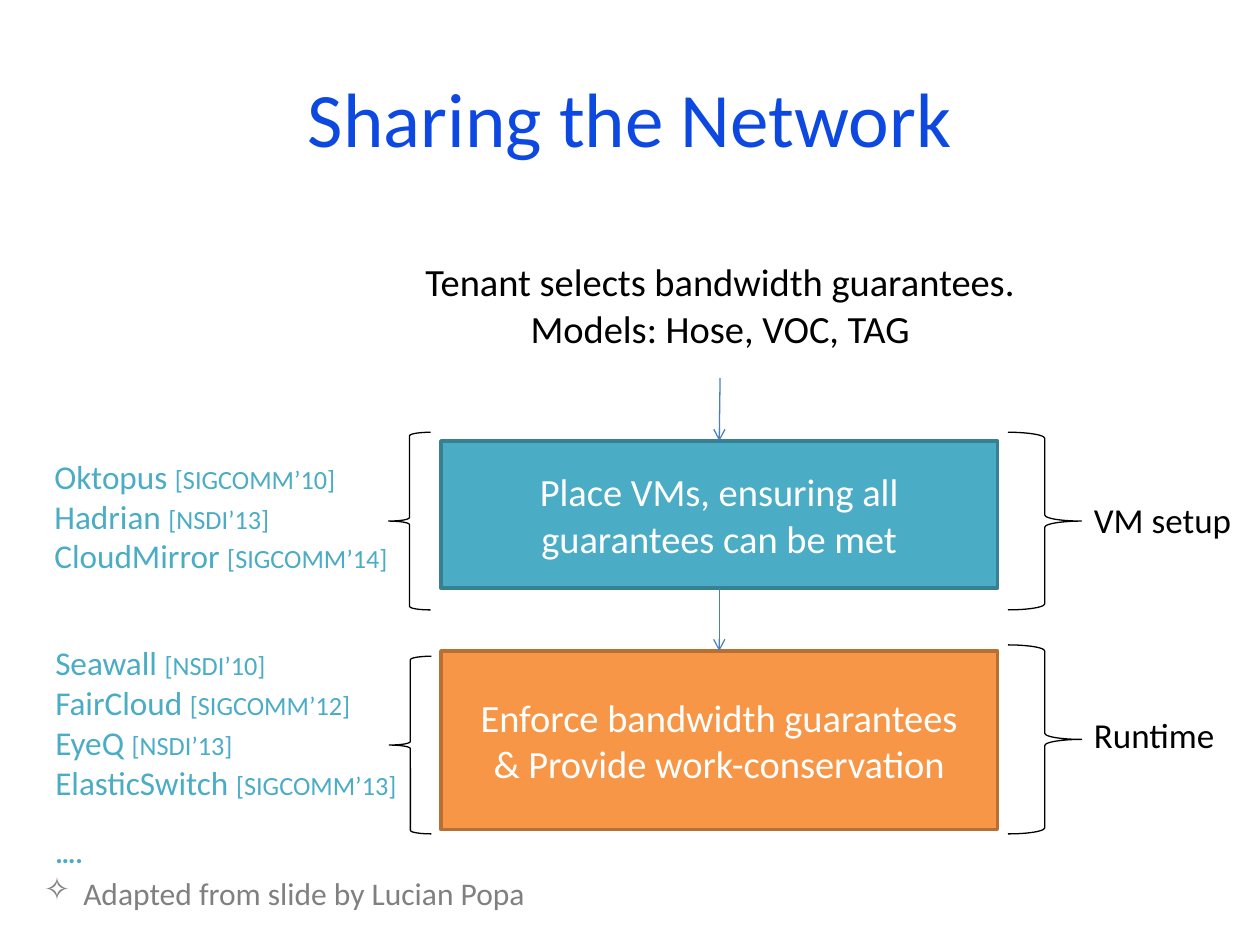
from typing import NamedTuple, Optional

from lxml.etree import SubElement
from pptx import Presentation
from pptx.dml.color import RGBColor
from pptx.enum.shapes import MSO_CONNECTOR as Connector, MSO_SHAPE as Shape
from pptx.enum.text import MSO_ANCHOR as Anchor, PP_ALIGN as Align
from pptx.oxml.ns import qn
from pptx.util import Pt

FONT = "Calibri"
TITLE_BLUE = RGBColor(0x0D, 0x49, 0xE1)
ARROW_BLUE = RGBColor(0x4B, 0x7E, 0xBC)
TEAL = RGBColor(0x4B, 0xAC, 0xC6)
DARK_TEAL = RGBColor(0x37, 0x7F, 0x92)
ORANGE = RGBColor(0xF7, 0x96, 0x46)
DARK_ORANGE = RGBColor(0xB7, 0x6F, 0x34)
GRAY = RGBColor(0x80, 0x80, 0x80)
BLACK = RGBColor(0, 0, 0)
WHITE = RGBColor(0xFF, 0xFF, 0xFF)

BOTTOM, TOP = 2, 0  # connection sites


class Area(NamedTuple):
    left: float
    top: float
    width: float
    height: float

    def points(self):
        return [Pt(value) for value in self]


class Span(NamedTuple):
    text: str
    size: float
    bold: Optional[bool] = None
    baseline: Optional[int] = None  # thousandths of a percent


class Stage(NamedTuple):
    area: Area
    fill: RGBColor
    edge: RGBColor
    lines: list
    left_brace: Area
    right_brace: Area
    label: str
    label_area: Area
    systems: list
    systems_area: Area


def write(shape, paragraphs, color, align=None, anchor=Anchor.TOP):
    """Fill a shape with paragraphs, each a list of spans."""
    frame = shape.text_frame
    frame.word_wrap = True
    frame.vertical_anchor = anchor
    for index, spans in enumerate(paragraphs):
        para = frame.paragraphs[0] if index == 0 else frame.add_paragraph()
        para.alignment = align
        for span in spans:
            run = para.add_run()
            run.text = span.text
            run.font.name = FONT
            run.font.size = Pt(span.size)
            run.font.bold = span.bold
            run.font.color.rgb = color
            if span.baseline is not None:
                run._r.get_or_add_rPr().set("baseline", str(span.baseline))


def add_text(page, area: Area, paragraphs, color, align=None, anchor=Anchor.TOP):
    box = page.shapes.add_textbox(*area.points())
    write(box, paragraphs, color, align, anchor)
    return box


def add_box(page, stage: Stage):
    box = page.shapes.add_shape(Shape.RECTANGLE, *stage.area.points())
    box.shadow.inherit = False
    box.fill.solid()
    box.fill.fore_color.rgb = stage.fill
    box.line.color.rgb = stage.edge
    box.line.width = Pt(2)
    lines = [[Span(line, 22)] for line in stage.lines]
    write(box, lines, WHITE, Align.CENTER, Anchor.MIDDLE)
    return box


def add_brace(page, area: Area, rotation: float = 0):
    brace = page.shapes.add_shape(Shape.LEFT_BRACE, *area.points())
    brace.rotation = rotation
    brace.shadow.inherit = False
    brace.fill.background()
    brace.line.color.rgb = BLACK
    brace.line.width = Pt(0.75)


def add_arrow(page, start, end):
    """Join the bottom of one box to the top of the next."""
    arrow = page.shapes.add_connector(Connector.STRAIGHT, 0, 0, 0, 0)
    arrow.begin_connect(start, BOTTOM)
    arrow.end_connect(end, TOP)
    arrow.line.color.rgb = ARROW_BLUE
    arrow.line.width = Pt(0.75)
    SubElement(arrow.line._get_or_add_ln(), qn("a:tailEnd"), type="arrow")
    SubElement(arrow._element.spPr, qn("a:effectLst"))


def system(name: str, venue: str):
    return [Span(name + " ", 19), Span(f"[{venue}]", 15)]


STAGES = [
    Stage(
        Area(252, 252, 318, 84), TEAL, DARK_TEAL,
        ["Place VMs, ensuring all guarantees can be met"],
        Area(222, 247, 24, 101.5), Area(576, 247, 42, 101.5),
        "VM setup", Area(618, 281.5, 102, 31.5),
        [system("Oktopus", "SIGCOMM’10"),
         system("Hadrian", "NSDI’13"),
         system("CloudMirror", "SIGCOMM’14")],
        Area(24, 257, 215, 76.5),
    ),
    Stage(
        Area(252, 372, 318, 102), ORANGE, DARK_ORANGE,
        ["Enforce bandwidth guarantees", "& Provide work-conservation"],
        Area(222.5, 375, 24, 101.5), Area(576, 368.5, 42, 108),
        "Runtime", Area(618, 404, 102, 31.5),
        [system("Seawall", "NSDI’10"),
         system("FairCloud", "SIGCOMM’12"),
         system("EyeQ", "NSDI’13"),
         system("ElasticSwitch", "SIGCOMM’13"),
         [Span("….", 28, True, -25000)]],
        Area(24.5, 363.5, 215, 121.5),
    ),
]


def main():
    deck = Presentation()
    deck.slide_width, deck.slide_height = Pt(720), Pt(540)
    page = deck.slides.add_slide(deck.slide_layouts[5])

    # Title
    title = page.shapes.title
    title.left, title.top, title.width, title.height = Area(36, 21.6, 648, 90).points()
    write(title, [[Span("Sharing the Network", 44)]], TITLE_BLUE,
          Align.CENTER, Anchor.MIDDLE)

    # Tenant request, then the two stages with braces and labels
    request = "Tenant selects bandwidth guarantees. Models: Hose, VOC, TAG"
    previous = add_text(page, Area(221, 132, 381, 84), [[Span(request, 22)]],
                        BLACK, Align.CENTER, Anchor.MIDDLE)
    for stage in STAGES:
        box = add_box(page, stage)
        add_arrow(page, previous, box)
        add_brace(page, stage.left_brace)
        add_brace(page, stage.right_brace, 180)
        add_text(page, stage.label_area, [[Span(stage.label, 20)]], BLACK)
        add_text(page, stage.systems_area, stage.systems, TEAL)
        previous = box

    # Credit with a star bullet
    credit = add_text(page, Area(18, 496, 666, 29),
                      [[Span("Adapted from slide by Lucian Popa", 18)]], GRAY)
    properties = credit.text_frame.paragraphs[0]._p.get_or_add_pPr()
    indent = Pt(22.5)
    properties.set("marL", str(indent))
    properties.set("indent", str(-indent))
    SubElement(properties, qn("a:buChar"), char="✧")

    deck.save("out.pptx")


if __name__ == "__main__":
    main()
